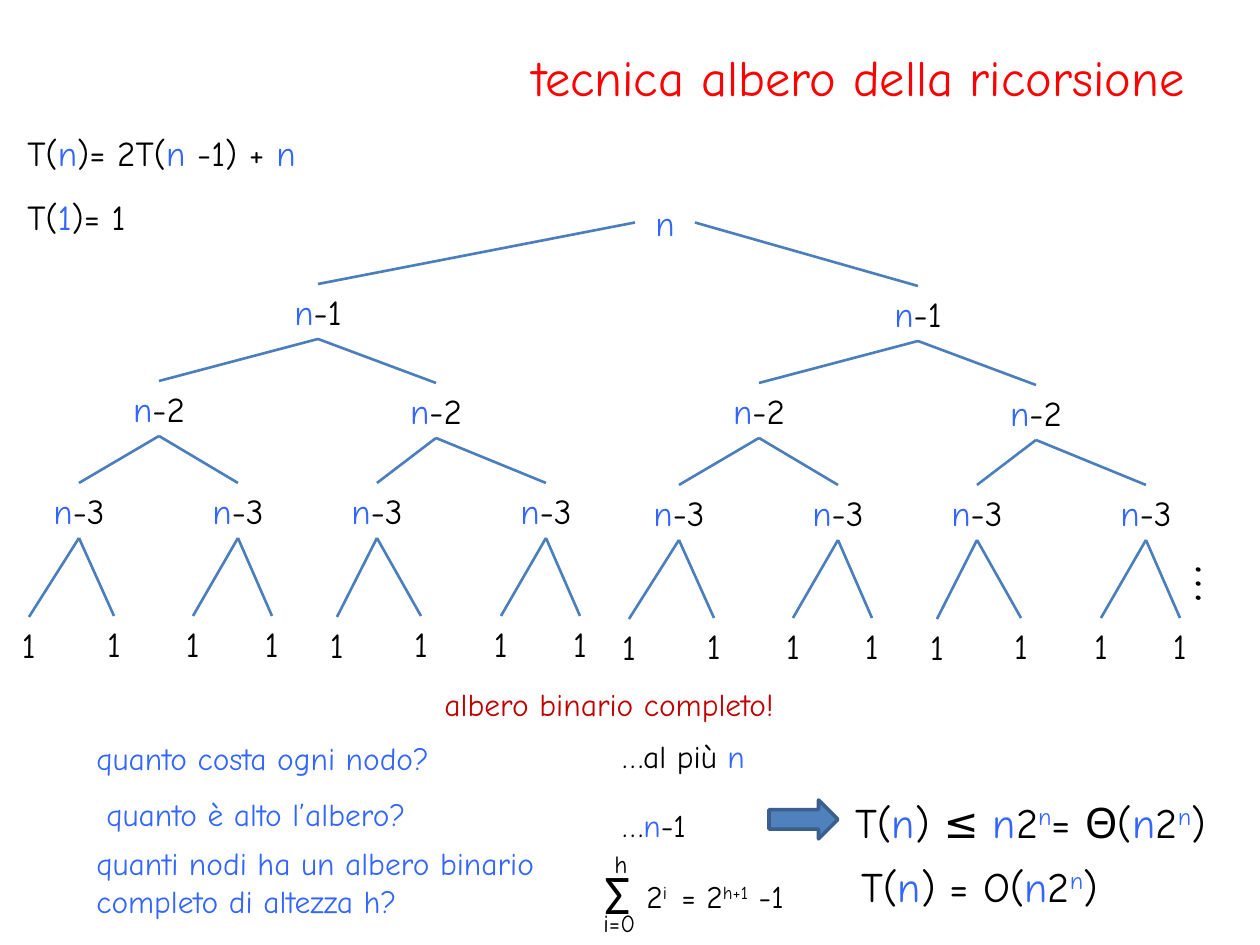
from dataclasses import dataclass
from typing import Optional

from lxml import etree
from pptx import Presentation
from pptx import util as u
from pptx.dml.color import RGBColor
from pptx.enum import shapes, text
from pptx.oxml.ns import qn

EMU_PER_PX = 914400 / 126
BLACK = RGBColor(0x00, 0x00, 0x00)
BLUE = RGBColor(0x33, 0x66, 0xFF)
RED = RGBColor(0xFF, 0x00, 0x00)
DARK_RED = RGBColor(0xC0, 0x00, 0x00)
BRANCH = RGBColor(0x4B, 0x7E, 0xBC)
ARROW_FILL = RGBColor(0x4F, 0x81, 0xBD)
ARROW_LINE = RGBColor(0x3A, 0x5F, 0x8C)
TOP, LEFT, BOTTOM, RIGHT = range(4)
NODE_HEIGHT = 55
RIGHT_SUBTREE_SHIFT = (600, 2)


@dataclass(frozen=True)
class Piece:
    text: str
    color: RGBColor = BLACK
    raised: bool = False


@dataclass(frozen=True)
class Label:
    left: int
    top: int
    width: int
    height: int
    pieces: tuple[Piece, ...]
    size: float = 18
    align: Optional[text.PP_ALIGN] = None
    font: str = "Comic Neue"
    anchor: text.MSO_ANCHOR = text.MSO_ANCHOR.TOP
    rotation: int = 0
    wrap: bool = True


@dataclass(frozen=True)
class Node:
    center: int
    top: int
    children: tuple["Node", ...] = ()


N = Piece("n", BLUE)
TWO = Piece("2")
POWER_N = Piece("n", BLUE, True)
CLOSE = Piece(")")

LABELS = (
    Label(63, 38, 1134, 77, (Piece("tecnica albero della ricorsione", RED),), 28.8,
          text.PP_ALIGN.RIGHT, anchor=text.MSO_ANCHOR.MIDDLE),
    Label(15, 125, 422, 55, (Piece("T("), N, Piece(")= 2T("), N, Piece(" -1) + "), N), 20),
    Label(15, 189, 159, 55, (Piece("T("), Piece("1", BLUE), Piece(")= 1")), 20),
    Label(432, 679, 436, 50, (Piece("albero binario completo!", DARK_RED),)),
    Label(84, 733, 536, 50, (Piece("quanto costa ogni nodo?", BLUE),)),
    Label(610, 731, 179, 50, (Piece("…al più "), N)),
    Label(94, 789, 387, 50, (Piece("quanto è alto l’albero?", BLUE),)),
    Label(610, 800, 110, 50, (Piece("…"), N, Piece("-1"))),
    Label(84, 838, 466, 89,
          (Piece("quanti nodi ha un albero binario completo di altezza h?", BLUE),)),
    Label(592, 852, 59, 81, (Piece("Σ"),), 32, font="Calibri", wrap=False),
    Label(591, 902, 59, 43, (Piece("i=0"),), 14),
    Label(602, 843, 59, 43, (Piece("h"),), 14),
    Label(634, 871, 59, 50, (TWO, Piece("i", raised=True))),
    Label(669, 871, 169, 50, (Piece("= 2"), Piece("h+1", raised=True), Piece(" -1"))),
    Label(843, 790, 392, 63, (Piece("T("), N, Piece(") ≤ "), N, TWO, POWER_N,
                              Piece("= Θ("), N, TWO, POWER_N, CLOSE), 24),
    Label(849, 854, 392, 63, (Piece("T("), N, Piece(") = O("), N, TWO, POWER_N, CLOSE), 24),
    Label(1194, 537, 49, 81, (Piece("…"),), 32, rotation=90),
)

SUBTREE = Node(318, 284, (
    Node(159, 381, (
        Node(79, 483, (Node(29, 617), Node(114, 616))),
        Node(238, 483, (Node(193, 616), Node(272, 616))),
    )),
    Node(436, 383, (
        Node(377, 483, (Node(337, 617), Node(421, 616))),
        Node(546, 483, (Node(501, 616), Node(580, 616))),
    )),
))


def emu(pixels: int) -> int:
    return round(pixels * EMU_PER_PX)


def add_label(slide, label: Label):
    box = slide.shapes.add_textbox(
        *map(emu, (label.left, label.top, label.width, label.height)))
    box.rotation = label.rotation
    frame = box.text_frame
    frame.word_wrap = label.wrap
    frame.vertical_anchor = label.anchor
    paragraph = frame.paragraphs[0]
    paragraph.alignment = label.align
    for piece in label.pieces:
        run = paragraph.add_run()
        run.text = piece.text
        run.font.name = label.font
        run.font.size = u.Pt(label.size)
        run.font.color.rgb = piece.color
        if piece.raised:
            run._r.get_or_add_rPr().set("baseline", "30000")
    return box


def add_node(slide, center: int, top: int, width: int, pieces: tuple[Piece, ...]):
    return add_label(slide, Label(center - width // 2, top, width, NODE_HEIGHT,
                                  pieces, 20, text.PP_ALIGN.CENTER))


def add_branch(slide, parent, side: int, child) -> None:
    branch = slide.shapes.add_connector(shapes.MSO_CONNECTOR.STRAIGHT, 0, 0, 0, 0)
    branch.begin_connect(parent, side)
    branch.end_connect(child, TOP)
    branch.line.color.rgb = BRANCH
    branch.line.width = u.Pt(1.5)
    etree.SubElement(branch._element.spPr, qn("a:effectLst"))


def add_subtree(slide, node: Node, shift: tuple[int, int], depth: int = 1):
    pieces = (N, Piece(f"-{depth}")) if node.children else (Piece("1"),)
    width = 138 if node.children else 90
    parent = add_node(slide, node.center + shift[0], node.top + shift[1], width, pieces)
    for child in node.children:
        add_branch(slide, parent, BOTTOM, add_subtree(slide, child, shift, depth + 1))
    return parent


def add_tree(slide) -> None:
    root = add_node(slide, 665, 195, 60, (N,))
    for side, shift in ((LEFT, (0, 0)), (RIGHT, RIGHT_SUBTREE_SHIFT)):
        add_branch(slide, root, side, add_subtree(slide, SUBTREE, shift))


def add_arrow(slide) -> None:
    arrow = slide.shapes.add_shape(shapes.MSO_SHAPE.RIGHT_ARROW,
                                   *map(emu, (769, 800, 69, 39)))
    arrow.shadow.inherit = False
    arrow.fill.solid()
    arrow.fill.fore_color.rgb = ARROW_FILL
    arrow.line.color.rgb = ARROW_LINE
    arrow.line.width = u.Pt(2)


def main() -> None:
    presentation = Presentation()
    presentation.slide_width = emu(1260)
    presentation.slide_height = emu(945)
    slide = presentation.slides.add_slide(presentation.slide_layouts[6])
    add_tree(slide)
    for label in LABELS:
        add_label(slide, label)
    add_arrow(slide)
    presentation.save("out.pptx")


if __name__ == "__main__":
    main()
